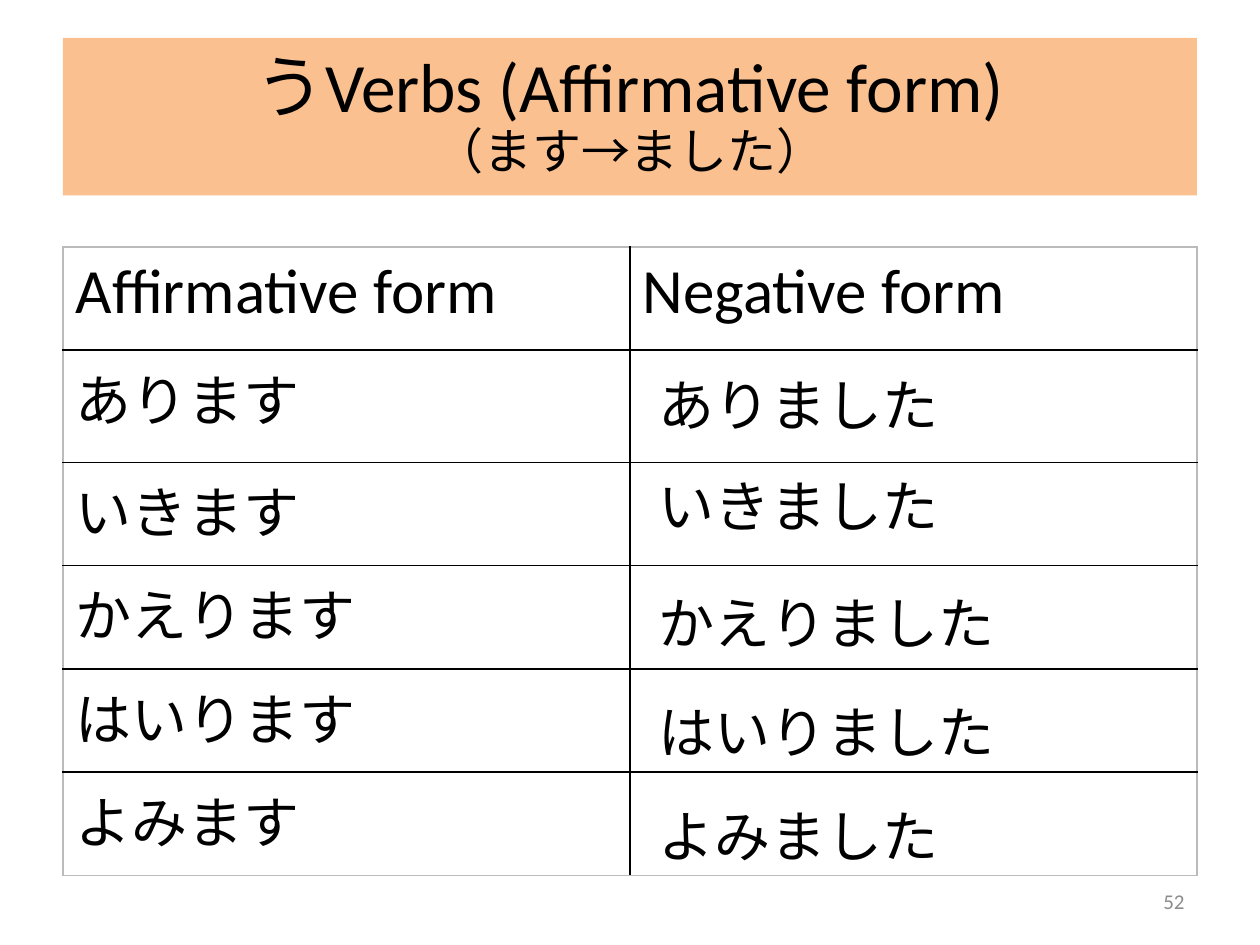
import pptx
import pptx.dml.color
import pptx.enum.shapes
import pptx.enum.text
import pptx.oxml
import pptx.oxml.ns
import pptx.util
from pptx.util import Inches

BLACK = pptx.dml.color.RGBColor(0, 0, 0)
PEACH = pptx.dml.color.RGBColor(0xFA, 0xC0, 0x90)
GRAY = pptx.dml.color.RGBColor(0x8C, 0x8C, 0x8C)
EDGE = pptx.dml.color.RGBColor(0xBB, 0xBB, 0xBB)
LATIN = "Calibri"
KANA = "Noto Sans CJK JP"
ALIGN = pptx.enum.text.PP_ALIGN
MIDDLE = pptx.enum.text.MSO_ANCHOR.MIDDLE

HEADERS = ("Affirmative form", "Negative form")
VERBS = (
    ("あります", "ありました", 2.89),
    ("いきます", "いきました", 3.69),
    ("かえります", "かえりました", 4.62),
    ("はいります", "はいりました", 5.48),
    ("よみます", "よみました", 6.31),
)


def format_run(r, size, font=LATIN, color=BLACK):
    r.font.size = pptx.util.Pt(size)
    r.font.name = font
    r.font.color.rgb = color
    ea = pptx.oxml.parse_xml(
        f'<a:ea {pptx.oxml.ns.nsdecls("a")} typeface="{KANA}"/>')
    r.font._element.find(pptx.oxml.ns.qn("a:latin")).addnext(ea)


def add_title(slide):
    sp = slide.shapes.add_shape(
        pptx.enum.shapes.MSO_SHAPE.RECTANGLE,
        Inches(0.5), Inches(0.3), Inches(9), Inches(1.25))
    sp.shadow.inherit = False
    sp.fill.solid()
    sp.fill.fore_color.rgb = PEACH
    sp.line.fill.background()
    tf = sp.text_frame
    tf.word_wrap = True
    tf.vertical_anchor = MIDDLE
    p = tf.paragraphs[0]
    p.text = "うVerbs (Affirmative form)\n（ます→ました）"
    p.alignment = ALIGN.CENTER
    p.line_spacing = 0.9
    for r, size in zip(p.runs, (39.6, 28)):
        format_run(r, size)


def add_text(slide, text, box, size, font, color=BLACK, align=ALIGN.LEFT):
    sp = slide.shapes.add_textbox(*map(Inches, box))
    tf = sp.text_frame
    tf.word_wrap = True
    tf.vertical_anchor = MIDDLE
    p = tf.paragraphs[0]
    p.text = text
    p.alignment = align
    format_run(p.runs[0], size, font, color)


def set_borders(cell, colors):
    tc_pr = cell._tc.get_or_add_tcPr()
    for i, (side, color) in enumerate(zip("LRTB", colors)):
        tc_pr.insert(i, pptx.oxml.parse_xml(
            f'<a:ln{side} {pptx.oxml.ns.nsdecls("a")} w="12700"><a:solidFill>'
            f'<a:srgbClr val="{color}"/></a:solidFill></a:ln{side}>'))


def add_verb_table(slide):
    rows = len(VERBS) + 1
    frame = slide.shapes.add_table(
        rows, 2, Inches(0.5), Inches(1.96), Inches(9), Inches(5))
    table = frame.table
    table.first_row = table.horz_banding = False
    for i, row in enumerate(table.rows):
        row.height = Inches(0.89 if i == 1 else 0.82)
        texts = HEADERS if i == 0 else (VERBS[i - 1][0], "")
        for j, (cell, text) in enumerate(zip(row.cells, texts)):
            cell.fill.background()
            outer = (j == 0, j == 1, i == 0, i == rows - 1)
            set_borders(cell, [EDGE if o else BLACK for o in outer])
            if text:
                cell.text_frame.text = text
                r = cell.text_frame.paragraphs[0].runs[0]
                format_run(r, *((36, LATIN) if i == 0 else (32, KANA)))


def main():
    prs = pptx.Presentation()
    prs.slide_width, prs.slide_height = Inches(10), Inches(7.5)
    slide = prs.slides.add_slide(prs.slide_layouts[6])
    add_title(slide)
    add_text(slide, "52", (7.17, 6.95, 2.33, 0.4), 12, LATIN, GRAY, ALIGN.RIGHT)
    add_verb_table(slide)
    for _, past, top in VERBS:
        add_text(slide, past, (5.13, top, 3.05, 0.64), 32, KANA)
    prs.save("out.pptx")


if __name__ == "__main__":
    main()
